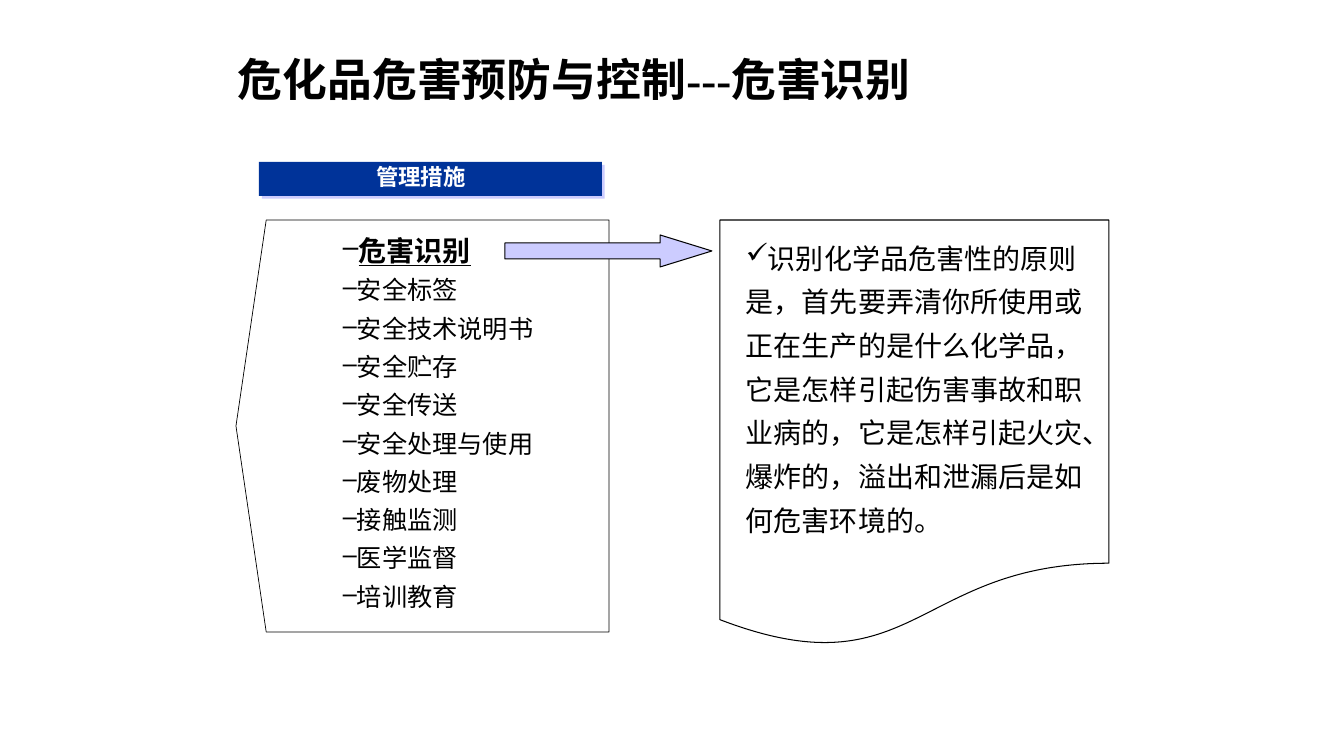
from lxml.etree import SubElement
from pptx import Presentation
from pptx.dml.color import RGBColor
from pptx.enum.shapes import MSO_SHAPE
from pptx.enum.text import MSO_ANCHOR, PP_ALIGN
from pptx.oxml.ns import qn
from pptx.util import Pt

PX = 12192000 / 1344
BLACK = RGBColor(0x00, 0x00, 0x00)
WHITE = RGBColor(0xFF, 0xFF, 0xFF)
NAVY = RGBColor(0x00, 0x33, 0x99)
LAVENDER = RGBColor(0xCC, 0xCC, 0xFF)
SERIF = "Times New Roman"
SANS = "Arial"

TITLE = "危化品危害预防与控制---危害识别"
MEASURES = ["危害识别", "安全标签", "安全技术说明书", "安全贮存", "安全传送",
            "安全处理与使用", "废物处理", "接触监测", "医学监督", "培训教育"]
PRINCIPLE = ("识别化学品危害性的原则是，首先要弄清你所使用或正在生产的是什么化学品，"
             "它是怎样引起伤害事故和职业病的，它是怎样引起火灾、爆炸的，"
             "溢出和泄漏后是如何危害环境的。")


def emu(px):
    return round(px * PX)


class SlideBuilder:
    def __init__(self, prs):
        self.slide = prs.slides.add_slide(prs.slide_layouts[6])

    def shape(self, kind, box, fill=None, line=None, adjustments=(), flip=False):
        sp = self.slide.shapes.add_shape(kind, *map(emu, box))
        sp.shadow.inherit = False
        for i, value in enumerate(adjustments):
            sp.adjustments[i] = value
        if fill is None:
            sp.fill.background()
        else:
            sp.fill.solid()
            sp.fill.fore_color.rgb = fill
        if line is None:
            sp.line.fill.background()
        else:
            sp.line.color.rgb = BLACK
            sp.line.width = Pt(line)
        if flip:
            sp._element.spPr.xfrm.set("flipH", "1")
        return sp

    def drop_shadow(self, sp, color):
        """Add a sharp shadow towards the lower right."""
        effects = sp._element.spPr.find(qn("a:effectLst"))
        shadow = SubElement(effects, qn("a:outerShdw"), blurRad="0",
                            dist=str(Pt(2.8)), dir="2700000", algn="ctr", rotWithShape="0")
        SubElement(shadow, qn("a:srgbClr"), val=str(color))

    def text_frame(self, box, inset=True, anchor=MSO_ANCHOR.TOP):
        tf = self.slide.shapes.add_textbox(*map(emu, box)).text_frame
        tf.word_wrap = True
        tf.vertical_anchor = anchor
        if not inset:
            tf.margin_left = tf.margin_right = tf.margin_top = tf.margin_bottom = 0
        return tf

    def paragraph(self, p, text, size, font=SERIF, color=BLACK, bold=False,
                  underline=False, align=PP_ALIGN.LEFT, bullet=None,
                  margin=0, indent=0, spacing=None, before=None):
        p.text = text
        pPr = p._p.get_or_add_pPr()
        pPr.set("marL", str(emu(margin)))
        pPr.set("indent", str(emu(indent)))
        if bullet:
            SubElement(pPr, qn("a:buChar"), char=bullet)
        p.alignment = align
        if spacing:
            p.line_spacing = spacing
        if before:
            p.space_before = Pt(before)
        for r in p.runs:
            r.font.name = font
            r.font.size = Pt(size)
            r.font.bold = bold
            r.font.underline = underline
            r.font.color.rgb = color


def main():
    prs = Presentation()
    prs.slide_width, prs.slide_height = emu(1344), emu(756)
    s = SlideBuilder(prs)

    s.shape(MSO_SHAPE.PENTAGON, (236, 220, 373, 412), WHITE, 0.5, [0.081], flip=True)
    tf = s.text_frame((293, 233, 320, 391), inset=False)
    for i, measure in enumerate(MEASURES):
        current = i == 0
        p = tf.paragraphs[0] if current else tf.add_paragraph()
        s.paragraph(p, measure, 20 if current else 18, bold=current, underline=current,
                    bullet="–", margin=21, indent=29,
                    spacing=None if current else 1.1, before=None if current else 3.6)

    banner = s.shape(MSO_SHAPE.RECTANGLE, (259, 162, 343, 34), NAVY)
    s.drop_shadow(banner, LAVENDER)
    tf = s.text_frame((275, 163, 292, 27), inset=False, anchor=MSO_ANCHOR.MIDDLE)
    s.paragraph(tf.paragraphs[0], "管理措施", 16, SANS, WHITE, bold=True,
                align=PP_ALIGN.CENTER)

    tf = s.text_frame((228, 47, 699, 65))
    s.paragraph(tf.paragraphs[0], TITLE, 32, bold=True, align=PP_ALIGN.JUSTIFY,
                margin=38, indent=-38)

    s.shape(MSO_SHAPE.FLOWCHART_DOCUMENT, (720, 220, 389, 428), line=0.75)
    s.shape(MSO_SHAPE.RIGHT_ARROW, (505, 235, 207, 32), LAVENDER, 0.75, [0.5, 1.621])
    tf = s.text_frame((736, 226, 357, 363))
    s.paragraph(tf.paragraphs[0], PRINCIPLE, 20, bullet="✓", spacing=1.3)

    prs.save("out.pptx")


if __name__ == "__main__":
    main()
